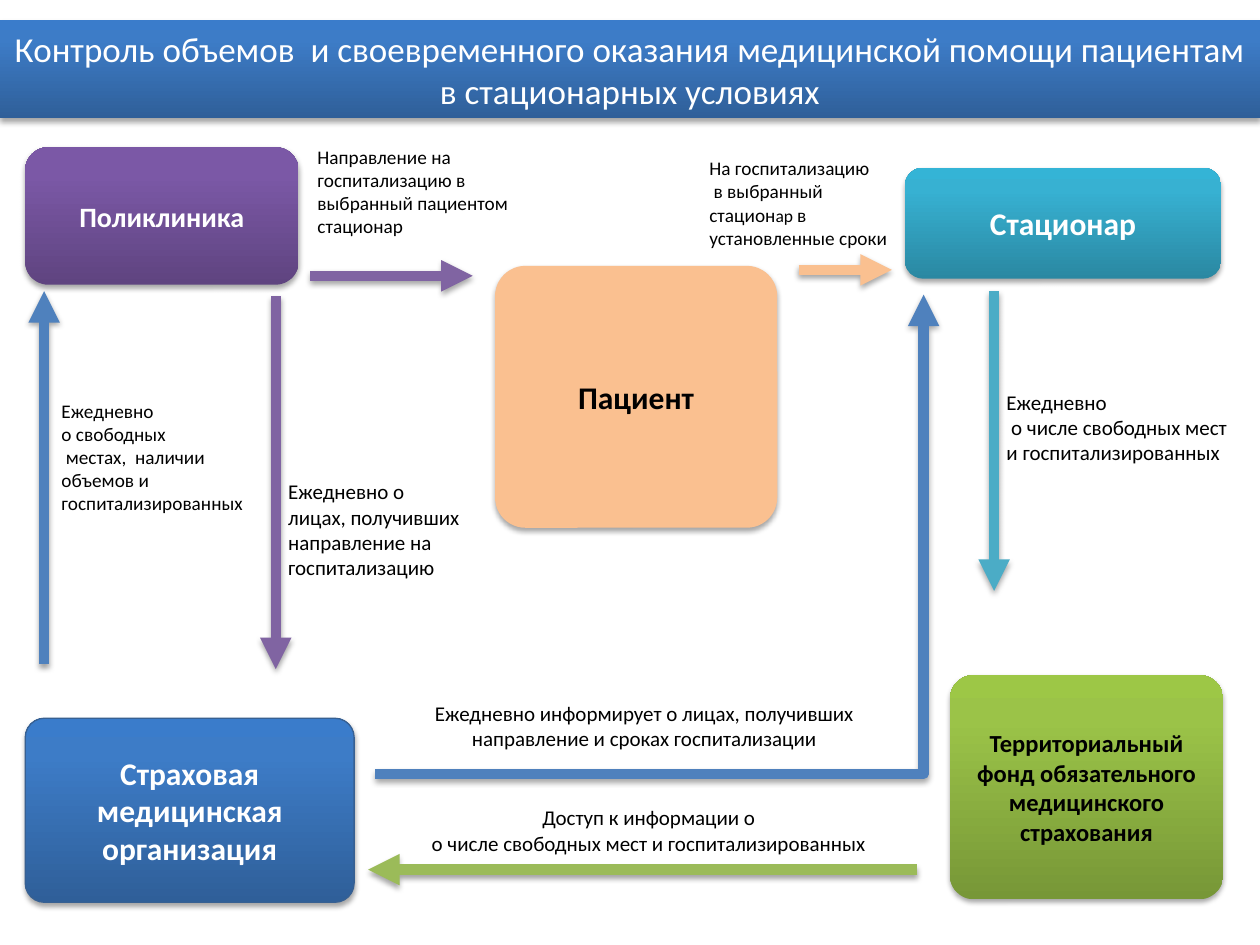
from copy import deepcopy

from lxml import etree
from pptx import Presentation
from pptx import util as u
from pptx.dml.color import RGBColor
from pptx.enum import shapes, text
from pptx.oxml import ns

FONT = "Calibri"
WHITE = RGBColor(0xFF, 0xFF, 0xFF)
BLACK = RGBColor(0x00, 0x00, 0x00)
BLUE = RGBColor(0x4F, 0x81, 0xBD)
DARK_BLUE = RGBColor(0x37, 0x60, 0x92)
PURPLE = RGBColor(0x80, 0x64, 0xA2)
PEACH = RGBColor(0xFA, 0xC0, 0x90)
GREEN = RGBColor(0x9B, 0xBB, 0x59)
TEAL = RGBColor(0x4B, 0xAC, 0xC6)

# Gradient colours from the bottom edge to the top edge
BLUE_GRADIENT = (RGBColor(0x2F, 0x5F, 0x99), RGBColor(0x3D, 0x7C, 0xC7), RGBColor(0x3A, 0x7C, 0xCB))
PURPLE_GRADIENT = (RGBColor(0x5F, 0x44, 0x80), RGBColor(0x7B, 0x58, 0xA6), RGBColor(0x7C, 0x57, 0xA8))
TEAL_GRADIENT = (RGBColor(0x2A, 0x88, 0xA2), RGBColor(0x37, 0xB1, 0xD2), RGBColor(0x34, 0xB4, 0xD6))
GREEN_GRADIENT = (RGBColor(0x77, 0x97, 0x37), RGBColor(0x9B, 0xC3, 0x48), RGBColor(0x9D, 0xC7, 0x46))
GRADIENT_POSITIONS = (0, 0.8, 1)

CENTER = text.PP_ALIGN.CENTER
LEFT = text.PP_ALIGN.LEFT
MIDDLE = text.MSO_ANCHOR.MIDDLE
TOP = text.MSO_ANCHOR.TOP


def cm(*values):
    return [u.Cm(v) for v in values]


def add_shadow(sp):
    """Soft shadow straight below; call it after fill and line are set."""
    effects = etree.SubElement(sp._element.spPr, ns.qn("a:effectLst"))
    shadow = etree.SubElement(effects, ns.qn("a:outerShdw"), blurRad="40000",
                              dist="23000", dir="5400000", rotWithShape="0")
    color = etree.SubElement(shadow, ns.qn("a:srgbClr"), val="000000")
    etree.SubElement(color, ns.qn("a:alpha"), val="35000")


def set_fill(sp, fill):
    """Fill with one colour, or with a vertical gradient of three."""
    if isinstance(fill, RGBColor):
        sp.fill.solid()
        sp.fill.fore_color.rgb = fill
        return
    sp.fill.gradient()
    sp.fill.gradient_angle = 90
    stops = sp._element.spPr.find(".//" + ns.qn("a:gsLst"))
    stops.append(deepcopy(stops[-1]))
    for stop, position, color in zip(sp.fill.gradient_stops, GRADIENT_POSITIONS, fill):
        stop.position = position
        stop.color.rgb = color


def format_run(r, size, color, bold=False):
    r.font.name = FONT
    r.font.size = u.Pt(size)
    r.font.bold = bold
    r.font.color.rgb = color


def set_text(tf, words, size, color, align, anchor, bold=False):
    tf.text = words
    tf.word_wrap = True
    tf.vertical_anchor = anchor
    for p in tf.paragraphs:
        p.alignment = align
        for r in p.runs:
            format_run(r, size, color, bold)


def block(s, box, words, fill, size, color=WHITE, bold=True, radius=0.167, outline=None):
    """Filled box with centred text; a radius of None gives square corners."""
    kind = shapes.MSO_SHAPE.ROUNDED_RECTANGLE if radius else shapes.MSO_SHAPE.RECTANGLE
    sp = s.shapes.add_shape(kind, *cm(*box))
    if radius:
        sp.adjustments[0] = radius
    set_fill(sp, fill)
    if outline:
        sp.line.color.rgb = outline
        sp.line.width = u.Pt(0.75)
    else:
        sp.line.fill.background()
    add_shadow(sp)
    set_text(sp.text_frame, words, size, color, CENTER, MIDDLE, bold)


def arrow(s, start, end, color):
    """Thick arrow; a diagonal one runs across first and then turns up."""
    straight = start[0] == end[0] or start[1] == end[1]
    kind = shapes.MSO_CONNECTOR.STRAIGHT if straight else shapes.MSO_CONNECTOR.ELBOW
    line = s.shapes.add_connector(kind, *cm(*start, *end))
    if not straight:
        guides = line._element.spPr.find(".//" + ns.qn("a:avLst"))
        etree.SubElement(guides, ns.qn("a:gd"), name="adj1", fmla="val 100000")
    line.line.color.rgb = color
    line.line.width = u.Pt(6)
    etree.SubElement(line.line._get_or_add_ln(), ns.qn("a:tailEnd"), type="triangle")
    add_shadow(line)


def label(s, box, words, size=12, align=LEFT, anchor=TOP):
    tf = s.shapes.add_textbox(*cm(*box)).text_frame
    set_text(tf, words, size, BLACK, align, anchor)
    return tf


def header(s, box):
    block(s, box, "Контроль объемов  и своевременного оказания медицинской помощи "
          "пациентам в стационарных условиях", BLUE_GRADIENT, 20, bold=False, radius=None)


def participants(s, x, y):
    """The five parties, measured from the top left corner of the diagram."""
    block(s, (x + 9.47, y + 2.39, 5.69, 5.28), "Пациент", PEACH, 18, BLACK, radius=0.116)
    block(s, (x + 17.73, y + 0.41, 6.38, 2.24), "Стационар", TEAL_GRADIENT, 18)
    block(s, (x, y + 11.51, 6.63, 3.71), "Страховая медицинская организация",
          BLUE_GRADIENT, 18, radius=0.104, outline=DARK_BLUE)
    block(s, (x + 18.64, y + 10.64, 5.51, 4.52),
          "Территориальный фонд обязательного медицинского страхования",
          GREEN_GRADIENT, 14, BLACK, radius=0.107)
    block(s, (x, y, 5.51, 2.77), "Поликлиника", PURPLE_GRADIENT, 16)


def flows(s, x, y):
    """Arrows between the parties, measured from the same corner."""
    for x1, y1, x2, y2, color in (
        (0.38, 10.42, 0.38, 2.9, BLUE),
        (7.06, 12.63, 18.11, 2.97, BLUE),
        (5.74, 2.59, 9.02, 2.59, PURPLE),
        (5.05, 3, 5.05, 10.52, PURPLE),
        (15.59, 2.47, 17.47, 2.47, PEACH),
        (17.98, 14.56, 6.91, 14.56, GREEN),
        (19.53, 2.9, 19.53, 8.94, TEAL),
    ):
        arrow(s, (x + x1, y + y1), (x + x2, y + y2), color)


def flow_labels(s, x, y):
    """Captions of the arrows, measured from the same corner."""
    label(s, (x + 5.64, y - 0.2, 4.57, 2.18),
          "Направление на госпитализацию в выбранный пациентом стационар", 11, anchor=MIDDLE)
    tf = label(s, (x + 13.54, y + 0.03, 4.47, 2.18),
               "На госпитализацию\n в выбранный стацион", 11, anchor=MIDDLE)
    for words, size in (("ар ", 10), ("в установленные сроки", 11)):
        r = tf.paragraphs[-1].add_run()
        r.text = words
        format_run(r, size, BLACK)
    label(s, (x + 0.48, y + 4.95, 4.17, 2.62),
          "Ежедневно\vо свободных\n местах,  наличии\nобъемов и\nгоспитализированных", 11)
    label(s, (x + 5.05, y + 6.56, 3.96, 2.31),
          "Ежедневно о лицах, получивших направление на госпитализацию")
    label(s, (x + 19.53, y + 4.75, 5.16, 1.8),
          "Ежедневно\n о числе свободных мест\nи госпитализированных")
    tf = label(s, (x + 6.98, y + 11.23, 11, 1.27),
               "Ежедневно информирует о лицах, получивших направление и сроках госпитализации",
               align=CENTER, anchor=MIDDLE)
    tf.margin_bottom = u.Cm(0.55)
    tf = label(s, (x + 7.16, y + 13.31, 10.82, 0.91),
               "Доступ к информации о\nо числе свободных мест и госпитализированных",
               align=CENTER, anchor=MIDDLE)
    tf.word_wrap = False


def main():
    prs = Presentation()
    prs.slide_width, prs.slide_height = cm(25.4, 19.05)
    s = prs.slides.add_slide(prs.slide_layouts[6])
    corner = (0.51, 2.97)
    participants(s, *corner)
    flows(s, *corner)
    flow_labels(s, *corner)
    header(s, (0, 0.41, 25.4, 1.98))
    prs.save("out.pptx")


if __name__ == "__main__":
    main()
